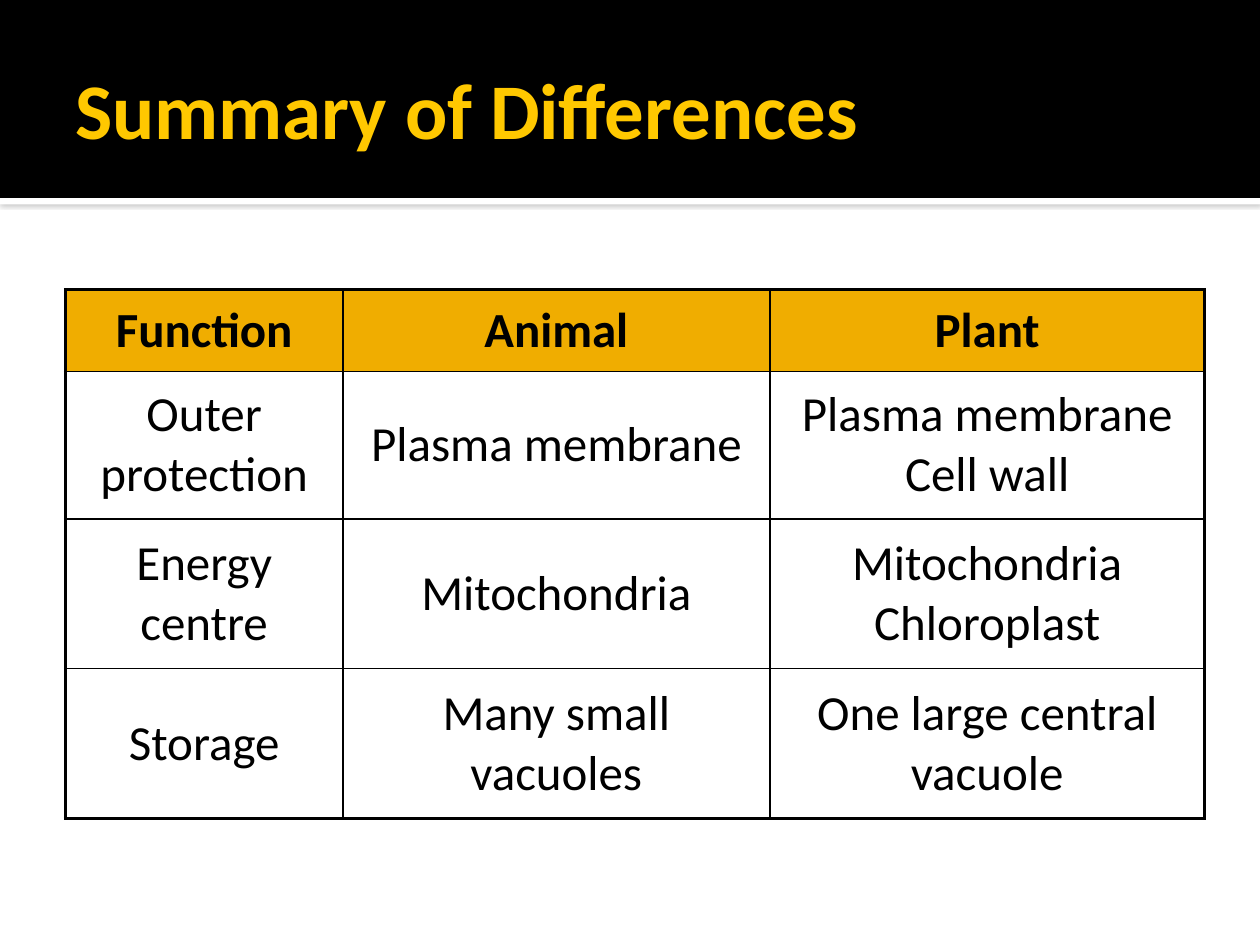
from typing import NamedTuple

from lxml import etree
from pptx import Presentation
from pptx import util as u
from pptx.dml.color import RGBColor
from pptx.enum import shapes, text
from pptx.oxml.ns import qn

BLACK = RGBColor(0x00, 0x00, 0x00)
WHITE = RGBColor(0xFF, 0xFF, 0xFF)
GOLD = RGBColor(0xF0, 0xAD, 0x00)
YELLOW = RGBColor(0xFF, 0xC8, 0x00)
GREY = RGBColor(0x80, 0x80, 0x80)
FONT = "Calibri"
THIN, THICK = u.Pt(1), u.Pt(2.25)


class Row(NamedTuple):
    height: float
    cells: tuple[str, ...]
    header: bool = False


COL_WIDTHS = (5.59, 8.61, 8.76)
ROWS = (
    Row(1.65, ("Function", "Animal", "Plant"), header=True),
    Row(2.97, ("Outer protection", "Plasma membrane", "Plasma membrane\nCell wall")),
    Row(3.02, ("Energy centre", "Mitochondria", "Mitochondria\nChloroplast")),
    Row(3.02, ("Storage", "Many small vacuoles", "One large central vacuole")),
)


def add_color(parent, color: RGBColor):
    return etree.SubElement(parent, qn("a:srgbClr"), val=str(color))


def add_band(s, top: float, height: float, color: RGBColor):
    """Draw a full-width rectangle without outline or shadow."""
    sp = s.shapes.add_shape(shapes.MSO_SHAPE.RECTANGLE,
                            u.Cm(0), u.Cm(top), u.Cm(25.4), u.Cm(height))
    sp.fill.solid()
    sp.fill.fore_color.rgb = color
    sp.line.fill.background()
    sp.shadow.inherit = False
    return sp


def add_shadow(sp) -> None:
    effects = sp.element.spPr.find(qn("a:effectLst"))
    shadow = etree.SubElement(effects, qn("a:outerShdw"), blurRad=str(u.Pt(2.5)),
                              dist=str(u.Pt(0.8)), dir="5400000", rotWithShape="0")
    etree.SubElement(add_color(shadow, GREY), qn("a:alpha"), val="60000")


def add_run(p, wording: str, size: float, color: RGBColor, bold: bool) -> None:
    r = p.add_run()
    r.text = wording
    r.font.name = FONT
    r.font.size = u.Pt(size)
    r.font.bold = bold
    r.font.color.rgb = color


def add_title(s, wording: str) -> None:
    sp = s.shapes.add_textbox(u.Cm(1.27), u.Cm(0.43), u.Cm(22.86), u.Cm(3.48))
    tf = sp.text_frame
    tf.word_wrap = True
    tf.vertical_anchor = text.MSO_ANCHOR.MIDDLE
    tf.margin_left = u.Cm(0.25)
    tf.margin_right = tf.margin_top = tf.margin_bottom = u.Cm(0.13)
    add_run(tf.paragraphs[0], wording, 45, YELLOW, True)


def set_borders(cell, widths: dict[str, int]) -> None:
    """Set border widths by side; call before filling, as lines come first."""
    tc_pr = cell._tc.get_or_add_tcPr()
    for side, width in widths.items():
        ln = etree.SubElement(tc_pr, qn(f"a:ln{side}"), w=str(width))
        add_color(etree.SubElement(ln, qn("a:solidFill")), BLACK)


def fill_cell(cell, wording: str, header: bool) -> None:
    if header:
        cell.fill.solid()
        cell.fill.fore_color.rgb = GOLD
    else:
        cell.fill.background()
    cell.vertical_anchor = text.MSO_ANCHOR.MIDDLE
    tf = cell.text_frame
    for i, line in enumerate(wording.split("\n")):
        p = tf.add_paragraph() if i else tf.paragraphs[0]
        p.alignment = text.PP_ALIGN.CENTER
        add_run(p, line, 28, BLACK, header)


def add_summary_table(s) -> None:
    table = s.shapes.add_table(
        len(ROWS), len(COL_WIDTHS), u.Cm(1.32), u.Cm(5.84),
        u.Cm(sum(COL_WIDTHS)), u.Cm(sum(row.height for row in ROWS))).table
    table.first_row = table.horz_banding = False
    for column, width in zip(table.columns, COL_WIDTHS):
        column.width = u.Cm(width)
    last_row, last_col = len(ROWS) - 1, len(COL_WIDTHS) - 1
    for i, row in enumerate(ROWS):
        table.rows[i].height = u.Cm(row.height)
        for j, wording in enumerate(row.cells):
            outer = {"L": j == 0, "R": j == last_col, "T": i == 0, "B": i == last_row}
            cell = table.cell(i, j)
            set_borders(cell, {side: THICK if edge else THIN
                               for side, edge in outer.items()})
            fill_cell(cell, wording, row.header)


def main() -> None:
    prs = Presentation()
    prs.slide_width, prs.slide_height = u.Cm(25.4), u.Cm(19.05)
    s = prs.slides.add_slide(prs.slide_layouts[6])
    add_shadow(add_band(s, 3.99, 0.13, WHITE))
    add_band(s, 0, 3.99, BLACK)
    add_title(s, "Summary of Differences")
    add_summary_table(s)
    prs.save("out.pptx")


if __name__ == "__main__":
    main()
